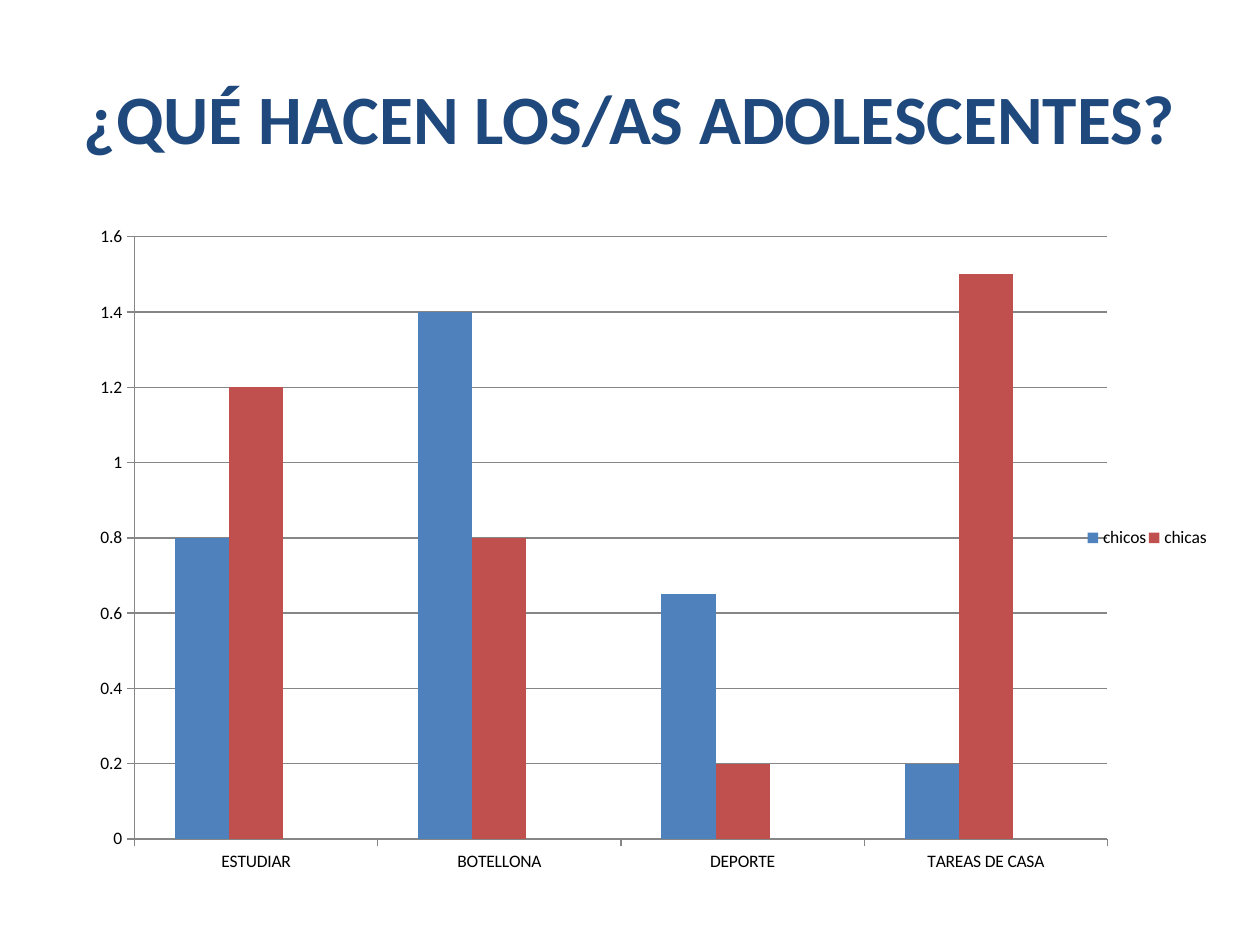
from lxml import etree
from pptx import Presentation
from pptx.chart.data import CategoryChartData as ChartData
from pptx.dml.color import RGBColor
from pptx.enum.chart import XL_CHART_TYPE as ChartType
from pptx.enum.chart import XL_LEGEND_POSITION as LegendPosition
from pptx.enum.chart import XL_TICK_MARK as TickMark
from pptx.enum.text import MSO_ANCHOR as Anchor
from pptx.enum.text import PP_ALIGN as Align
from pptx.oxml import parse_xml
from pptx.oxml.ns import nsdecls, qn
from pptx.util import Cm, Pt

COLORS = {
    "title": "1F497D",
    "text": "000000",
    "axis": "868686",
    "chicos": "4F81BD",
    "chicas": "C0504D",
    "Series 3": "9BBB59",
}
CATEGORIES = ["ESTUDIAR", "BOTELLONA", "DEPORTE", "TAREAS DE CASA"]
SERIES = {
    "chicos": [0.8, 1.4, 0.65, 0.2],
    "chicas": [1.2, 0.8, 0.2, 1.5],
    "Series 3": [None] * 4,  # keeps the empty third slot in each group
}


def format_font(font, size, color, bold=False, name="Calibri"):
    font.name, font.size, font.bold = name, Pt(size), bold
    font.color.rgb = RGBColor.from_string(COLORS[color])


def manual_layout(x, y, width, height, inner=False):
    """Return a layout element with fractions of the chart area."""
    layout = parse_xml(f"<c:layout {nsdecls('c')}><c:manualLayout/></c:layout>")
    settings = {"xMode": "edge", "yMode": "edge", "x": x, "y": y, "w": width, "h": height}
    if inner:
        settings = {"layoutTarget": "inner", **settings}
    for tag, value in settings.items():
        etree.SubElement(layout[0], qn(f"c:{tag}")).set("val", str(value))
    return layout


class SlideBuilder:
    def __init__(self, slide):
        self.slide = slide

    def title(self, text, left, top, width, height, size):
        box = self.slide.shapes.add_textbox(Cm(left), Cm(top), Cm(width), Cm(height))
        frame = box.text_frame
        frame.word_wrap = True
        frame.vertical_anchor = Anchor.MIDDLE
        paragraph = frame.paragraphs[0]
        paragraph.text = text
        paragraph.alignment = Align.CENTER
        format_font(paragraph.font, size, "title", bold=True)

    def column_chart(self, categories, series, left, top, width, height):
        data = ChartData()
        data.categories = categories
        for name, values in series.items():
            data.add_series(name, values)
        chart = self.slide.shapes.add_chart(
            ChartType.COLUMN_CLUSTERED, Cm(left), Cm(top), Cm(width), Cm(height), data
        ).chart
        chart.has_title = False
        format_font(chart.font, 10, "text")

        # Columns
        plot = chart.plots[0]
        plot.gap_width, plot.overlap = 150, 0
        plot.vary_by_categories = False
        for column in plot.series:
            column.format.fill.solid()
            column.format.fill.fore_color.rgb = RGBColor.from_string(COLORS[column.name])

        # Axes
        value_axis, category_axis = chart.value_axis, chart.category_axis
        value_axis.minimum_scale, value_axis.maximum_scale = 0, 1.6
        value_axis.major_unit = 0.2
        value_axis.has_major_gridlines = True
        for axis in (value_axis, category_axis):
            axis.major_tick_mark = TickMark.OUTSIDE
        for part in (value_axis, category_axis, value_axis.major_gridlines):
            part.format.line.width = Pt(0.75)
            part.format.line.color.rgb = RGBColor.from_string(COLORS["axis"])

        # Plot area
        plot_area = plot._element.getparent()
        for layout in plot_area.findall(qn("c:layout")):
            plot_area.remove(layout)
        plot_area.insert(0, manual_layout(0.05, 0.03, 0.86, 0.9, inner=True))

        # Legend without the empty series
        chart.has_legend = True
        legend = chart.legend
        legend.position = LegendPosition.RIGHT
        legend.include_in_layout = False
        element = legend._element
        for layout in element.findall(qn("c:layout")):
            element.remove(layout)
        hidden_entry = parse_xml(
            f'<c:legendEntry {nsdecls("c")}><c:idx val="2"/><c:delete val="1"/></c:legendEntry>'
        )
        element.insert(1, hidden_entry)
        element.insert(2, manual_layout(0.89, 0.46, 0.11, 0.04))


def main():
    presentation = Presentation()
    presentation.slide_width, presentation.slide_height = Cm(25.4), Cm(19.05)
    builder = SlideBuilder(presentation.slides.add_slide(presentation.slide_layouts[6]))

    # Heading
    builder.title("¿QUÉ HACEN LOS/AS ADOLESCENTES?", 1.27, 0.76, 22.86, 3.18, size=39.6)

    # Activities by gender
    builder.column_chart(CATEGORIES, SERIES, 1.57, 4.37, 22.81, 13.49)

    presentation.save("out.pptx")


if __name__ == "__main__":
    main()
